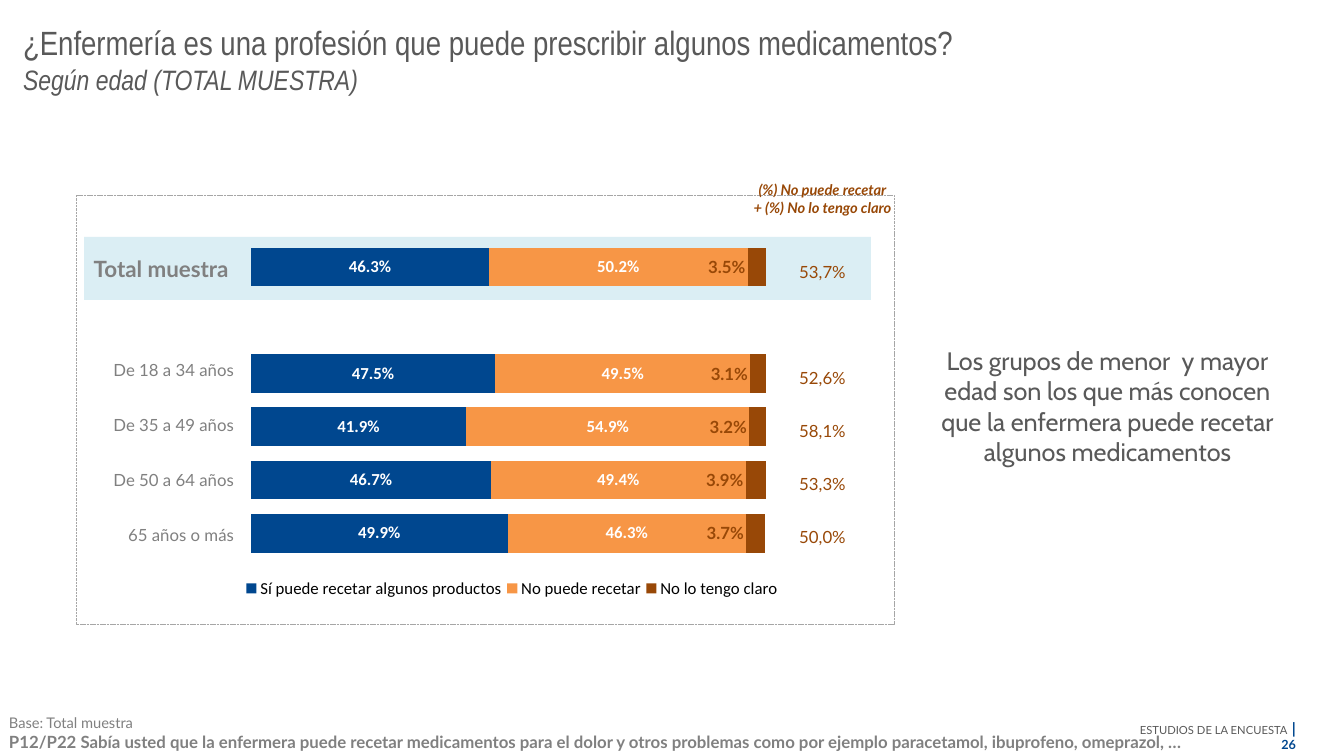
from lxml import etree
from pptx import Presentation
from pptx.chart.data import CategoryChartData
from pptx.dml.color import RGBColor
from pptx.enum.chart import XL_CHART_TYPE, XL_LABEL_POSITION as POS, XL_LEGEND_POSITION
from pptx.enum.dml import MSO_LINE
from pptx.enum.shapes import MSO_SHAPE
from pptx.enum.text import MSO_ANCHOR as ANCHOR, MSO_AUTO_SIZE, PP_ALIGN as ALIGN
from pptx.oxml.ns import qn
from pptx.util import Emu, Pt

PX = 12192000 / 1344
NO_GRID_STYLE = "{2D5ABB26-0587-4C30-8999-92F81FD0307C}"

BLUE = RGBColor(0x00, 0x47, 0x8F)
ORANGE = RGBColor(0xF7, 0x96, 0x46)
BROWN = RGBColor(0x98, 0x48, 0x07)
DARK = RGBColor(0x59, 0x59, 0x59)
GREY = RGBColor(0x80, 0x80, 0x80)
FRAME_GREY = RGBColor(0xA6, 0xA6, 0xA6)
BAND = RGBColor(0xDB, 0xEE, 0xF4)
WHITE = RGBColor(0xFF, 0xFF, 0xFF)
BLACK = RGBColor(0x00, 0x00, 0x00)


def font(size, name, color, **more):
    return {"size": Pt(size), "name": name, "color": color, **more}


# Each text is a list of paragraphs, each paragraph a list of (text, font); "\v" breaks a line
TITLE = [[
    ("¿Enfermería es una profesión que puede prescribir algunos medicamentos?\v",
     font(24, "Arial Narrow", DARK)),
    ("Según edad (TOTAL MUESTRA)", font(20, "Arial Narrow", DARK, italic=True)),
]]
BASE = [
    [("Base: Total muestra", font(10.5, "Lato", GREY))],
    [("P12/P22 Sabía usted que la enfermera puede recetar medicamentos para el dolor y otros "
      "problemas como por ejemplo paracetamol, ibuprofeno, omeprazol, …",
      font(12, "Lato", GREY, bold=True))],
]
FOOTER = [[
    ("ESTUDIOS DE LA ENCUESTA", font(8, "Lato", DARK)),
    (" ", font(11, "Lato", DARK)),
    ("|\v", font(11, "Lato", BLUE, bold=True)),
    ("26", font(9, "Lato", BLUE, bold=True)),
]]
CONCLUSION = [[
    ("Los grupos de menor  y mayor edad son los que más conocen que la enfermera puede "
     "recetar algunos medicamentos", font(18, "Cabin", DARK)),
]]

AGE = font(12, "Lato", GREY)
SUM = font(12, "Lato", BROWN)
GROUPS = [
    (49, "Total muestra ", font(16, "Lato", GREY, bold=True)),
    (49, "", AGE),
    (55, "De 18 a 34 años", AGE),
    (55, "De 35 a 49 años", AGE),
    (55, "De 50 a 64 años", AGE),
    (55, "65 años o más", AGE),
]
SUMS = [
    (93, "(%) No puede recetar\v+ (%) No lo tengo claro",
     font(10.5, "Lato", BROWN, bold=True, italic=True)),
] + [(53, text, SUM) for text in ("53,7%", "", "52,6%", "58,1%", "53,3%", "50,0%")]

LABEL = font(12, "Calibri", WHITE, bold=True)
SERIES = [
    ("Sí puede recetar algunos productos", [46.3, None, 47.5, 41.9, 46.7, 49.9], BLUE, LABEL),
    ("No puede recetar", [50.2, None, 49.5, 54.9, 49.4, 46.3], ORANGE, LABEL),
    ("No lo tengo claro", [3.5, None, 3.1, 3.2, 3.9, 3.7], BROWN,
     font(12, "Lato", BROWN, bold=True)),
]
PERCENT = r"0.0\%"
CHART_BOX = (241, 239, 542, 382)
LABEL_SHIFT = -41


def box(*lengths):
    return [Emu(round(v * PX)) for v in lengths]


def set_font(f, fmt):
    for key, value in fmt.items():
        if key == "color":
            f.color.rgb = value
        else:
            setattr(f, key, value)


def write(tf, paragraphs, anchor=ANCHOR.TOP, align=ALIGN.LEFT, margins=(10, 5)):
    tf.word_wrap = True
    tf.auto_size = MSO_AUTO_SIZE.NONE
    tf.vertical_anchor = anchor
    tf.margin_left = tf.margin_right = box(margins[0])[0]
    tf.margin_top = tf.margin_bottom = box(margins[1])[0]
    for i, runs in enumerate(paragraphs):
        p = tf.paragraphs[0] if i == 0 else tf.add_paragraph()
        p.alignment = align
        add_runs(p, runs)


def add_runs(p, runs):
    for text, fmt in runs:
        for i, line in enumerate(text.split("\v")):
            if i:
                p.add_line_break()
            if line:
                r = p.add_run()
                r.text = line
                set_font(r.font, fmt)


def add_rect(s, bounds, fill=None):
    sp = s.shapes.add_shape(MSO_SHAPE.RECTANGLE, *box(*bounds))
    sp.shadow.inherit = False
    sp.line.fill.background()
    if fill is None:
        sp.fill.background()
    else:
        sp.fill.solid()
        sp.fill.fore_color.rgb = fill
    return sp


def add_column(s, left, top, width, rows, align):
    """Add a one-column table without grid from (height, text, font) rows."""
    height = sum(row[0] for row in rows)
    table = s.shapes.add_table(len(rows), 1, *box(left, top, width, height)).table
    table.first_row = table.horz_banding = False
    table._tbl.tblPr.find(qn("a:tableStyleId")).text = NO_GRID_STYLE
    for i, (row_height, text, fmt) in enumerate(rows):
        table.rows[i].height = box(row_height)[0]
        cell = table.cell(i, 0)
        cell.fill.background()
        cell.vertical_anchor = ANCHOR.MIDDLE
        cell.margin_left = cell.margin_right = cell.margin_top = box(1)[0]
        cell.margin_bottom = 0
        p = cell.text_frame.paragraphs[0]
        p.alignment = align
        add_runs(p, [(text, fmt)])


def layout_xml(**values):
    """Build a manual chart layout; values are shares of the chart's size."""
    layout = etree.Element(qn("c:layout"))
    manual = etree.SubElement(layout, qn("c:manualLayout"))
    for tag, value in values.items():
        etree.SubElement(manual, qn("c:" + tag)).set("val", str(value))
    return layout


def replace_layout(parent, index, layout):
    for old in parent.findall(qn("c:layout")):
        parent.remove(old)
    parent.insert(index, layout)


def add_bars(s):
    data = CategoryChartData(number_format=PERCENT)
    data.categories = ["1", "2", "3", "4", "5", "6"]
    for name, values, _, _ in SERIES:
        data.add_series(name, values)
    chart = s.shapes.add_chart(XL_CHART_TYPE.BAR_STACKED, *box(*CHART_BOX), data).chart
    set_font(chart.font, font(10, "Calibri", BLACK))
    chart.has_title = False
    chart.category_axis.reverse_order = True
    chart.category_axis.visible = False
    axis = chart.value_axis
    axis.minimum_scale, axis.maximum_scale = 0, 100
    axis.has_major_gridlines = axis.visible = False
    plot = chart.plots[0]
    plot.gap_width, plot.overlap, plot.vary_by_categories = 37, 100, False

    chart.has_legend = True
    legend = chart.legend
    legend.position = XL_LEGEND_POSITION.BOTTOM
    legend.include_in_layout = False
    set_font(legend.font, font(12, "Calibri", BLACK))
    replace_layout(legend._element, 1, layout_xml(
        xMode="edge", yMode="edge", x=0, y=0.88, w=1, h=0.07))
    replace_layout(chart._chartSpace.chart.plotArea, 0, layout_xml(
        layoutTarget="inner", xMode="edge", yMode="edge", x=0.018, y=0.004, w=0.95, h=0.836))

    for series, (_, _, color, fmt) in zip(plot.series, SERIES):
        series.format.fill.solid()
        series.format.fill.fore_color.rgb = color
        labels = series.data_labels
        labels.show_value = True
        labels.number_format, labels.number_format_is_linked = PERCENT, False
        labels.position = POS.CENTER
        set_font(labels.font, fmt)

    _, values, _, fmt = SERIES[-1]
    series = plot.series[len(SERIES) - 1]
    series.data_labels.position = POS.INSIDE_BASE
    for i, value in enumerate(values):
        if value is not None:
            label = series.points[i].data_label
            label.position = POS.INSIDE_BASE
            set_font(label.font, fmt)
            element = series.data_labels._element.findall(qn("c:dLbl"))[-1]
            replace_layout(element, 1, layout_xml(x=round(LABEL_SHIFT / CHART_BOX[2], 2), y=0))


def main():
    prs = Presentation()
    prs.slide_width, prs.slide_height = box(1344, 756)
    s = prs.slides.add_slide(prs.slide_layouts[5])

    title = s.shapes.title
    title.left, title.top, title.width, title.height = box(13, 17, 1151, 85)
    write(title.text_frame, TITLE)

    frame = add_rect(s, (76, 195, 818, 429))
    frame.line.color.rgb = FRAME_GREY
    frame.line.width = Pt(0.25)
    frame.line.dash_style = MSO_LINE.SQUARE_DOT
    add_rect(s, (84, 237, 787, 63), BAND)

    add_bars(s)
    add_column(s, 65, 244, 170, GROUPS, ALIGN.RIGHT)
    add_column(s, 751, 152, 143, SUMS, ALIGN.CENTER)

    conclusion = add_rect(s, (924, 315, 367, 182), WHITE)
    write(conclusion.text_frame, CONCLUSION, ANCHOR.MIDDLE, ALIGN.CENTER)
    conclusion.text_frame.paragraphs[0].space_after = Pt(6)

    base = s.shapes.add_textbox(*box(0, 710, 1212, 46))
    write(base.text_frame, BASE, ANCHOR.BOTTOM, margins=(9, 4))
    footer = s.shapes.add_textbox(*box(1114, 721, 192, 29))
    write(footer.text_frame, FOOTER, ANCHOR.MIDDLE, ALIGN.RIGHT)

    prs.save("out.pptx")


if __name__ == "__main__":
    main()
